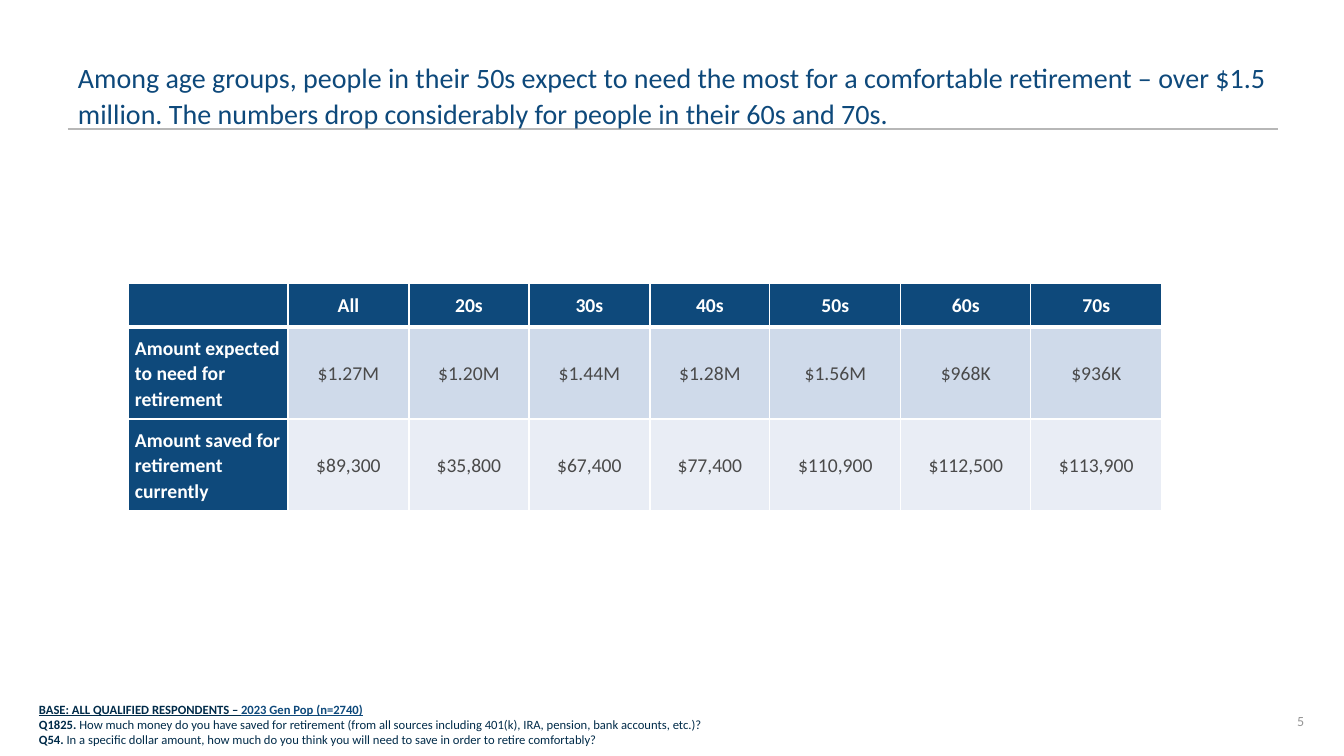
import pptx
import pptx.util
import pptx.dml.color
import pptx.enum.shapes
import pptx.enum.text
import pptx.oxml
import pptx.oxml.ns

RGB = pptx.dml.color.RGBColor
ALIGN = pptx.enum.text.PP_ALIGN
ANCHOR = pptx.enum.text.MSO_ANCHOR

NAVY = RGB(0x0E, 0x49, 0x7B)
INK = RGB(0x00, 0x2B, 0x49)
WHITE = RGB(0xFF, 0xFF, 0xFF)
GREY = RGB(0x4A, 0x4A, 0x4A)
PAGE_GREY = RGB(0x96, 0x96, 0x96)
FRAME = RGB(0xB7, 0xB7, 0xB7)
BANDS = [RGB(0xCF, 0xDA, 0xEA), RGB(0xE9, 0xED, 0xF5)]

TITLE = ("Among age groups, people in their 50s expect to need the most for a "
         "comfortable retirement – over $1.5 million. The numbers drop "
         "considerably for people in their 60s and 70s.")
ROWS = [
    ("", "All", "20s", "30s", "40s", "50s", "60s", "70s"),
    ("Amount expected to need for retirement", "$1.27M", "$1.20M", "$1.44M",
     "$1.28M", "$1.56M", "$968K", "$936K"),
    ("Amount saved for retirement currently", "$89,300", "$35,800", "$67,400",
     "$77,400", "$110,900", "$112,500", "$113,900"),
]
FOOTNOTES = [
    [("BASE: ALL QUALIFIED RESPONDENTS – ", dict(bold=True, underline=True)),
     ("2023 Gen Pop (n=2740)", dict(bold=True, underline=True, color=NAVY))],
    [("Q1825. ", dict(bold=True)),
     ("How much money do you have saved for retirement (from all sources "
      "including 401(k), IRA, pension, bank accounts, etc.)?", {})],
    [("Q54. ", dict(bold=True)),
     ("In a specific dollar amount, how much do you think you will need to "
      "save in order to retire comfortably?", {})],
]
PAGE_NUMBER = "5"

SLIDE_SIZE = (1344, 756)
TITLE_BOX = (68, 58, 1210, 71)
TABLE_AT = (128, 283)
COL_WIDTHS = [160, 121, 120, 121, 120, 131, 130, 131]
ROW_HEIGHTS = [44, 92, 92]
FOOTNOTE_BOX = (29, 696, 849, 56)
PAGE_BOX = (1012, 701, 302, 40)
EMU_PER_PX = 914400 / 100.8


def px(n):
    return pptx.util.Emu(round(n * EMU_PER_PX))


def add_text(p, text, size=14, color=INK, bold=False, underline=False,
             align=ALIGN.LEFT, spacing=None):
    p.alignment = align
    if spacing:
        p.line_spacing = spacing
    r = p.add_run()
    r.text = text
    r.font.name = "Calibri"
    r.font.size = pptx.util.Pt(size)
    r.font.bold = bold
    r.font.underline = underline
    r.font.color.rgb = color


def set_borders(cell, bottom):
    """Give the cell white edges: 1 pt, and `bottom` or `top` as stated."""
    tcPr = cell._tc.get_or_add_tcPr()
    widths = {"lnL": 1, "lnR": 1, "lnT": 1, "lnB": bottom}
    for i, (tag, width) in enumerate(widths.items()):
        tcPr.insert(i, pptx.oxml.parse_xml(
            f'<a:{tag} {pptx.oxml.ns.nsdecls("a")} w="{pptx.util.Pt(width)}">'
            f'<a:solidFill><a:srgbClr val="{WHITE}"/></a:solidFill></a:{tag}>'))


def add_box(s, box, anchor):
    tf = s.shapes.add_textbox(*map(px, box)).text_frame
    tf.word_wrap = True
    tf.vertical_anchor = anchor
    return tf


def add_title(s):
    sp = s.shapes.add_shape(
        pptx.enum.shapes.MSO_SHAPE.LINE_CALLOUT_1_NO_BORDER, *map(px, TITLE_BOX))
    for i, value in enumerate((1, 0, 1, 1)):
        sp.adjustments[i] = value
    sp.shadow.inherit = False
    sp.fill.background()
    sp.line.color.rgb = FRAME
    sp.line.width = pptx.util.Pt(0.75)
    tf = sp.text_frame
    tf.word_wrap = True
    tf.vertical_anchor = ANCHOR.TOP
    tf.margin_left = tf.margin_right = px(10)
    tf.margin_top = tf.margin_bottom = 0
    add_text(tf.paragraphs[0], TITLE, size=20, color=NAVY, spacing=1.07)


def add_savings_table(s):
    table = s.shapes.add_table(
        len(ROWS), len(COL_WIDTHS), *map(px, TABLE_AT),
        px(sum(COL_WIDTHS)), px(sum(ROW_HEIGHTS))).table
    for col, width in zip(table.columns, COL_WIDTHS):
        col.width = px(width)
    for row, height in zip(table.rows, ROW_HEIGHTS):
        row.height = px(height)
    for i, values in enumerate(ROWS):
        for j, text in enumerate(values):
            cell = table.cell(i, j)
            heading = i == 0 or j == 0
            cell.fill.solid()
            cell.fill.fore_color.rgb = NAVY if heading else BANDS[i - 1]
            cell.vertical_anchor = ANCHOR.MIDDLE
            cell.margin_left = cell.margin_right = px(7)
            cell.margin_top = cell.margin_bottom = 0
            set_borders(cell, bottom=3 if i == 0 else 1)
            if text:
                add_text(cell.text_frame.paragraphs[0], text, bold=heading,
                         color=WHITE if heading else GREY, spacing=1.07,
                         align=ALIGN.LEFT if j == 0 else ALIGN.CENTER)


def add_footnotes(s):
    tf = add_box(s, FOOTNOTE_BOX, ANCHOR.BOTTOM)
    for i, runs in enumerate(FOOTNOTES):
        p = tf.add_paragraph() if i else tf.paragraphs[0]
        for text, style in runs:
            add_text(p, text, size=9, **style)


def main():
    prs = pptx.Presentation()
    prs.slide_width, prs.slide_height = map(px, SLIDE_SIZE)
    s = prs.slides.add_slide(prs.slide_layouts[6])
    page = add_box(s, PAGE_BOX, ANCHOR.MIDDLE)
    add_text(page.paragraphs[0], PAGE_NUMBER, size=10, color=PAGE_GREY,
             align=ALIGN.RIGHT)
    add_title(s)
    add_savings_table(s)
    add_footnotes(s)
    prs.save("out.pptx")


if __name__ == "__main__":
    main()
